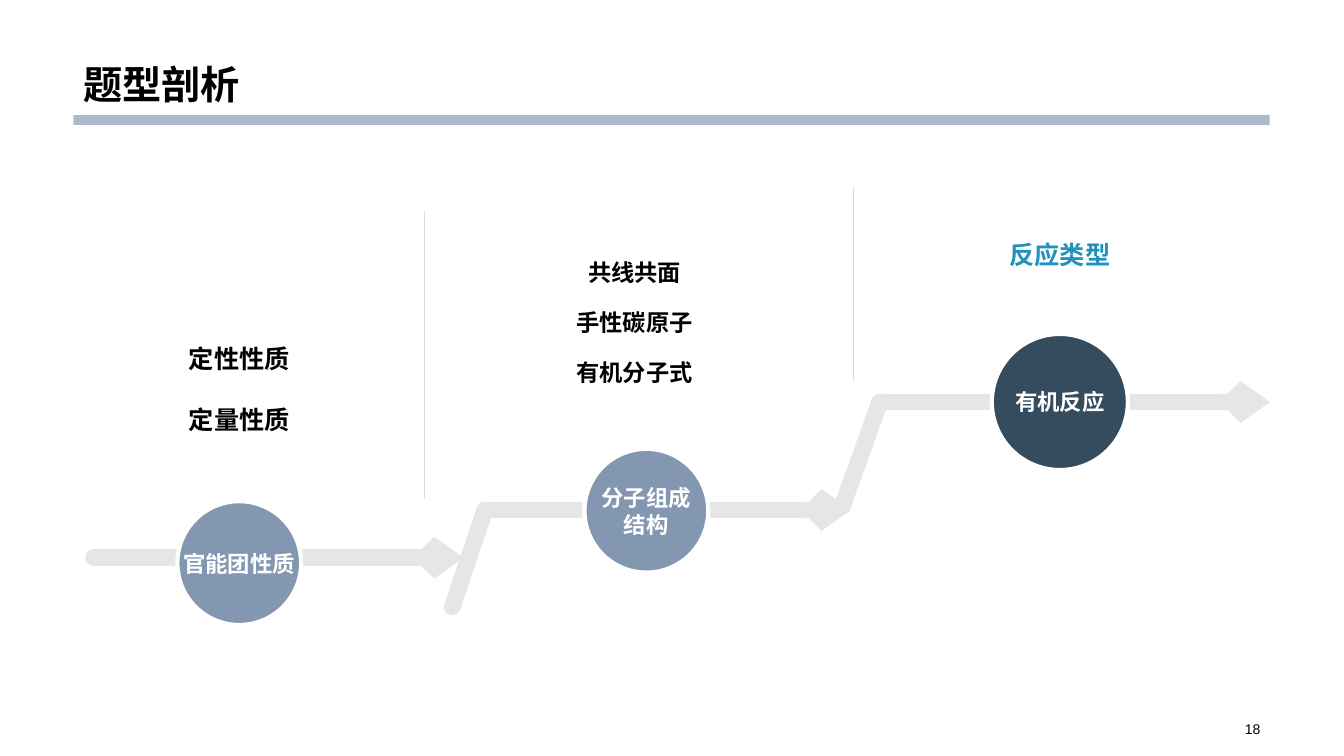
from dataclasses import dataclass

from lxml import etree
from pptx import Presentation
from pptx import util as u
from pptx.dml import color
from pptx.enum import shapes, text
from pptx.oxml import ns


@dataclass(frozen=True)
class Theme:
    font: str = "Arial"
    ink: str = "000000"
    white: str = "FFFFFF"
    bar: str = "ADB9CA"
    path_grey: str = "E7E6E6"
    divider: str = "D9D9D9"
    slate: str = "8497B0"
    navy: str = "354B5E"
    accent: str = "2192BC"
    title_size: float = 28
    topic_size: float = 18
    compact_topic_size: float = 16.6
    circle_size: float = 16
    number_size: float = 10
    path_width: float = 12
    ring_width: float = 3
    divider_width: float = 0.25


THEME = Theme()


@dataclass
class Stage:
    """One step of the path; offsets are in cm from the arrow's start."""
    left: float
    axis: float
    width: float
    circle_text: str
    circle_offset: tuple
    diameter: float
    topics: str
    topic_offset: tuple
    circle_color: str = THEME.slate
    topic_color: str = THEME.ink
    topic_size: float = THEME.topic_size
    topic_spacing: float = 2.0
    foot_offset: tuple = None


STAGES = [
    Stage(2.36, 14.05, 9.32, "官能团性质", (3.67, 0.14), 3.12,
          "定性性质\n定量性质", (3.67, -2.98)),
    Stage(12.22, 12.85, 9.22, "分子组成\n结构", (4.07, 0.02), 3.12,
          "共线共面\n手性碳原子\n有机分子式", (3.77, -2.99),
          topic_size=THEME.compact_topic_size, topic_spacing=1.8,
          foot_offset=(-0.82, 2.44)),
    Stage(22.17, 10.13, 9.83, "有机反应", (4.54, 0), 3.43,
          "反应类型", (4.54, -3.22), circle_color=THEME.navy,
          topic_color=THEME.accent, foot_offset=(-0.94, 2.62)),
]
# x, top, bottom in cm
DIVIDERS = [(10.69, 5.31, 12.57), (21.49, 4.7, 9.6)]


def rgb(value):
    return color.RGBColor.from_string(value)


def write_text(shape, content, size, ink, bold=True, align=None, anchor=None,
               spacing=None, wrap=True):
    frame = shape.text_frame
    frame.text = content
    frame.word_wrap = wrap
    frame.vertical_anchor = anchor
    for paragraph in frame.paragraphs:
        paragraph.alignment = align
        paragraph.line_spacing = spacing
        for run in paragraph.runs:
            run.font.name = THEME.font
            run.font.size = u.Pt(size)
            run.font.bold = bold
            run.font.color.rgb = rgb(ink)


def add_text(slide, box, content, size, ink, **options):
    shape = slide.shapes.add_textbox(*map(u.Cm, box))
    write_text(shape, content, size, ink, **options)


def add_line(slide, start, end, ink, width, rounded=False, arrow=False):
    line = slide.shapes.add_connector(
        shapes.MSO_CONNECTOR.STRAIGHT, *map(u.Cm, (*start, *end)))
    line.line.color.rgb = rgb(ink)
    line.line.width = u.Pt(width)
    outline = line.line._get_or_add_ln()
    if rounded:
        outline.set("cap", "rnd")
    if arrow:
        etree.SubElement(outline, ns.qn("a:tailEnd"),
                         type="arrow", w="sm", len="sm")
    etree.SubElement(line._element.spPr, ns.qn("a:effectLst"))


def add_header(slide, left, top, width, height):
    # Title sits on the bar
    bar_height = 0.25
    bar = slide.shapes.add_shape(
        shapes.MSO_SHAPE.RECTANGLE,
        *map(u.Cm, (left, top + height - bar_height, width, bar_height)))
    bar.shadow.inherit = False
    bar.fill.solid()
    bar.fill.fore_color.rgb = rgb(THEME.bar)
    bar.line.fill.background()
    add_text(slide, (left, top, width, height - bar_height - 0.05), "题型剖析",
             THEME.title_size, THEME.ink, spacing=0.9,
             anchor=text.MSO_ANCHOR.BOTTOM)


def add_stage(slide, stage):
    def at(offset):
        return stage.left + offset[0], stage.axis + offset[1]

    # Riser and arrow
    if stage.foot_offset:
        add_line(slide, at((0, 0)), at(stage.foot_offset), THEME.path_grey,
                 THEME.path_width, rounded=True)
    add_line(slide, at((0, 0)), at((stage.width, 0)), THEME.path_grey,
             THEME.path_width, rounded=True, arrow=True)

    # Circle
    center_x, center_y = at(stage.circle_offset)
    radius = stage.diameter / 2
    circle = slide.shapes.add_shape(
        shapes.MSO_SHAPE.OVAL,
        *map(u.Cm, (center_x - radius, center_y - radius,
                    stage.diameter, stage.diameter)))
    circle.shadow.inherit = False
    circle.fill.solid()
    circle.fill.fore_color.rgb = rgb(stage.circle_color)
    circle.line.color.rgb = rgb(THEME.white)
    circle.line.width = u.Pt(THEME.ring_width)
    write_text(circle, stage.circle_text, THEME.circle_size, THEME.white,
               align=text.PP_ALIGN.CENTER, anchor=text.MSO_ANCHOR.MIDDLE,
               wrap=False)

    # Topics, stacked upwards from their bottom edge
    topic_width, topic_height = 8.2, 4.3
    topic_x, topic_bottom = at(stage.topic_offset)
    add_text(slide, (topic_x - topic_width / 2, topic_bottom - topic_height,
                     topic_width, topic_height),
             stage.topics, stage.topic_size, stage.topic_color,
             align=text.PP_ALIGN.CENTER, anchor=text.MSO_ANCHOR.BOTTOM,
             spacing=stage.topic_spacing)


def add_dividers(slide):
    for x, top, bottom in DIVIDERS:
        add_line(slide, (x, top), (x, bottom), THEME.divider,
                 THEME.divider_width)


def add_page_number(slide, left, top, width, height):
    add_text(slide, (left, top, width, height), "18", THEME.number_size,
             THEME.ink, bold=False, align=text.PP_ALIGN.RIGHT,
             anchor=text.MSO_ANCHOR.MIDDLE)


def main():
    presentation = Presentation()
    presentation.slide_width = u.Cm(33.87)
    presentation.slide_height = u.Cm(19.05)
    slide = presentation.slides.add_slide(presentation.slide_layouts[6])
    add_header(slide, 1.85, 0, 30.15, 3.15)
    for stage in STAGES:
        add_stage(slide, stage)
    add_dividers(slide)
    add_page_number(slide, 23.93, 18.08, 8.08, 0.58)
    presentation.save("out.pptx")


if __name__ == "__main__":
    main()
